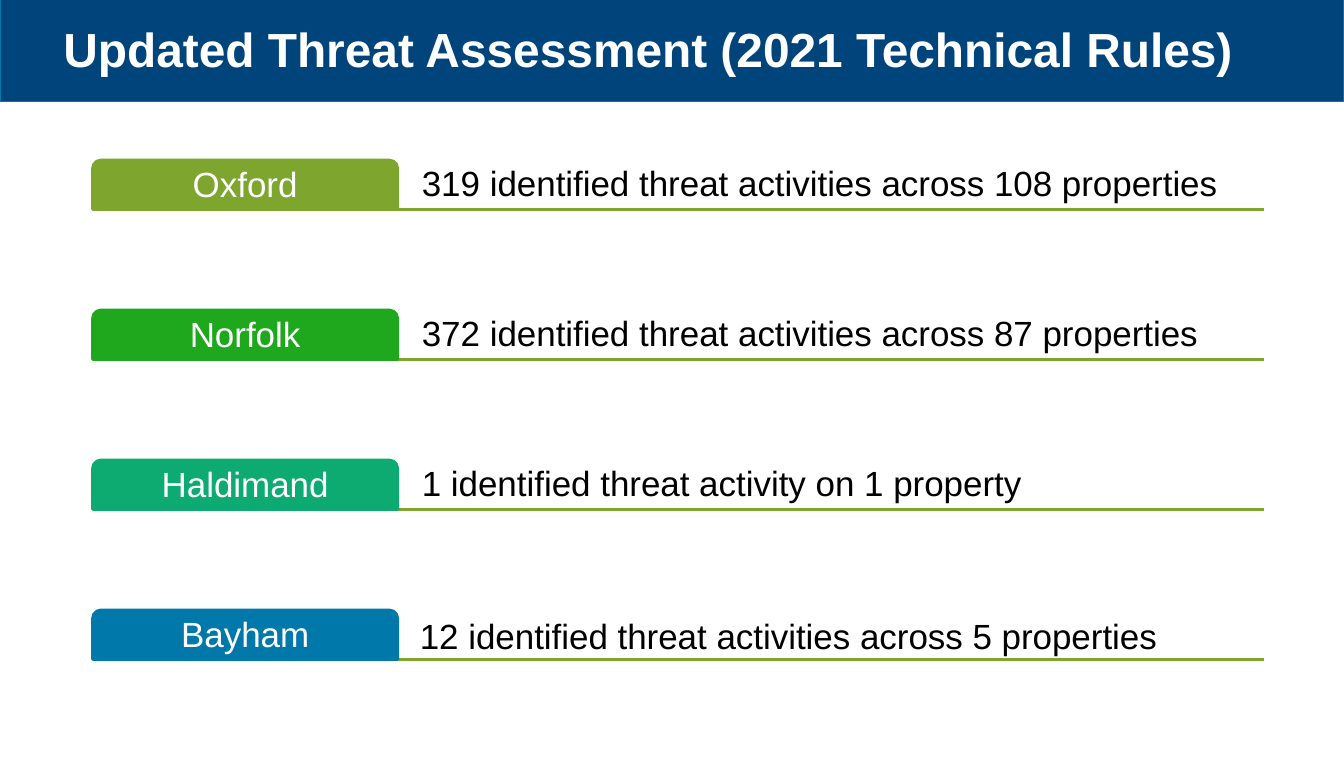
from lxml import etree
from pptx import Presentation
from pptx.dml.color import RGBColor
from pptx.enum.shapes import MSO_CONNECTOR, MSO_SHAPE
from pptx.enum.text import MSO_ANCHOR, PP_ALIGN
from pptx.oxml.ns import qn
from pptx.util import Inches, Pt

RECTANGLE = MSO_SHAPE.RECTANGLE
TAB = MSO_SHAPE.ROUND_2_SAME_RECTANGLE
STRAIGHT = MSO_CONNECTOR.STRAIGHT
TOP, MIDDLE, BOTTOM = MSO_ANCHOR.TOP, MSO_ANCHOR.MIDDLE, MSO_ANCHOR.BOTTOM
LEFT, CENTER = PP_ALIGN.LEFT, PP_ALIGN.CENTER

COLORS = {
    "navy": "00447C",
    "blue": "0078A9",
    "olive": "7EA52E",
    "green": "1FA81D",
    "teal": "0DAA71",
    "white": "FFFFFF",
    "black": "000000",
}


class ThreatSlide:
    font = "Arial"
    body_size = 25
    title_size = 34.2
    line_width = 2

    def __init__(self, slide):
        self.shapes = slide.shapes

    def color(self, name):
        return RGBColor.from_string(COLORS[name])

    def add_text(self, shape, text, color, size, align, anchor, left_inset=0.05,
                 inset=0.05, spacing=0.9, bold=False):
        frame = shape.text_frame
        frame.word_wrap = True
        frame.vertical_anchor = anchor
        frame.margin_left = Inches(left_inset)
        frame.margin_right = frame.margin_top = frame.margin_bottom = Inches(inset)
        paragraph = frame.paragraphs[0]
        paragraph.alignment = align
        paragraph.line_spacing = spacing
        run = paragraph.add_run()
        run.text = text
        run.font.name = self.font
        run.font.size = Pt(size)
        run.font.bold = bold
        run.font.color.rgb = self.color(color)

    def block(self, kind, box, fill, line, width):
        shape = self.shapes.add_shape(kind, *map(Inches, box))
        shape.shadow.inherit = False
        shape.fill.solid()
        shape.fill.fore_color.rgb = self.color(fill)
        shape.line.color.rgb = self.color(line)
        shape.line.width = Pt(width)
        return shape

    def title(self, text, box):
        banner = self.block(RECTANGLE, box, "navy", "blue", 0.75)
        self.add_text(banner, text, "white", self.title_size, LEFT, MIDDLE,
                      left_inset=0.63, inset=0.06, spacing=1.0, bold=True)

    def rule(self, left, right, y):
        line = self.shapes.add_connector(
            STRAIGHT, Inches(left), Inches(y), Inches(right), Inches(y))
        line.line.color.rgb = self.color("olive")
        line.line.width = Pt(self.line_width)
        etree.SubElement(line._element.spPr, qn("a:effectLst"))

    def tab(self, text, box, color):
        municipality = self.block(TAB, box, color, color, self.line_width)
        municipality.adjustments[0] = 0.167
        municipality.adjustments[1] = 0
        self.add_text(municipality, text, "white", self.body_size, CENTER, MIDDLE)

    def finding(self, text, box, left_inset, anchor, spacing):
        summary = self.shapes.add_textbox(*map(Inches, box))
        self.add_text(summary, text, "black", self.body_size, LEFT, anchor,
                      left_inset=left_inset, spacing=spacing)


def main():
    presentation = Presentation()
    presentation.slide_width = Inches(13.35)
    presentation.slide_height = Inches(7.52)
    page = ThreatSlide(presentation.slides.add_slide(presentation.slide_layouts[6]))
    page.title("Updated Threat Assessment (2021 Technical Rules)",
               (0, -0.05, 13.35, 1.06))

    left, right, tab_width, row_height = 0.92, 12.56, 3.03, 0.49
    first_top, pitch = 1.59, 1.49
    finding_left = left + tab_width
    standard = (0.24, BOTTOM, 0.9)
    lowered = (0.22, TOP, 1.0)
    municipalities = [
        ("Oxford", "319 identified threat activities across 108 properties", "olive", standard),
        ("Norfolk", "372 identified threat activities across 87 properties", "green", standard),
        ("Haldimand", "1 identified threat activity on 1 property", "teal", standard),
        ("Bayham", "12 identified threat activities across 5 properties", "blue", lowered),
    ]
    for row, (name, finding, color, placement) in enumerate(municipalities):
        top = first_top + row * pitch
        page.rule(left, right, top + row_height)
        page.finding(finding, (finding_left, top, right - finding_left, row_height), *placement)
        page.tab(name, (left, top, tab_width, row_height), color)

    presentation.save("out.pptx")


if __name__ == "__main__":
    main()
